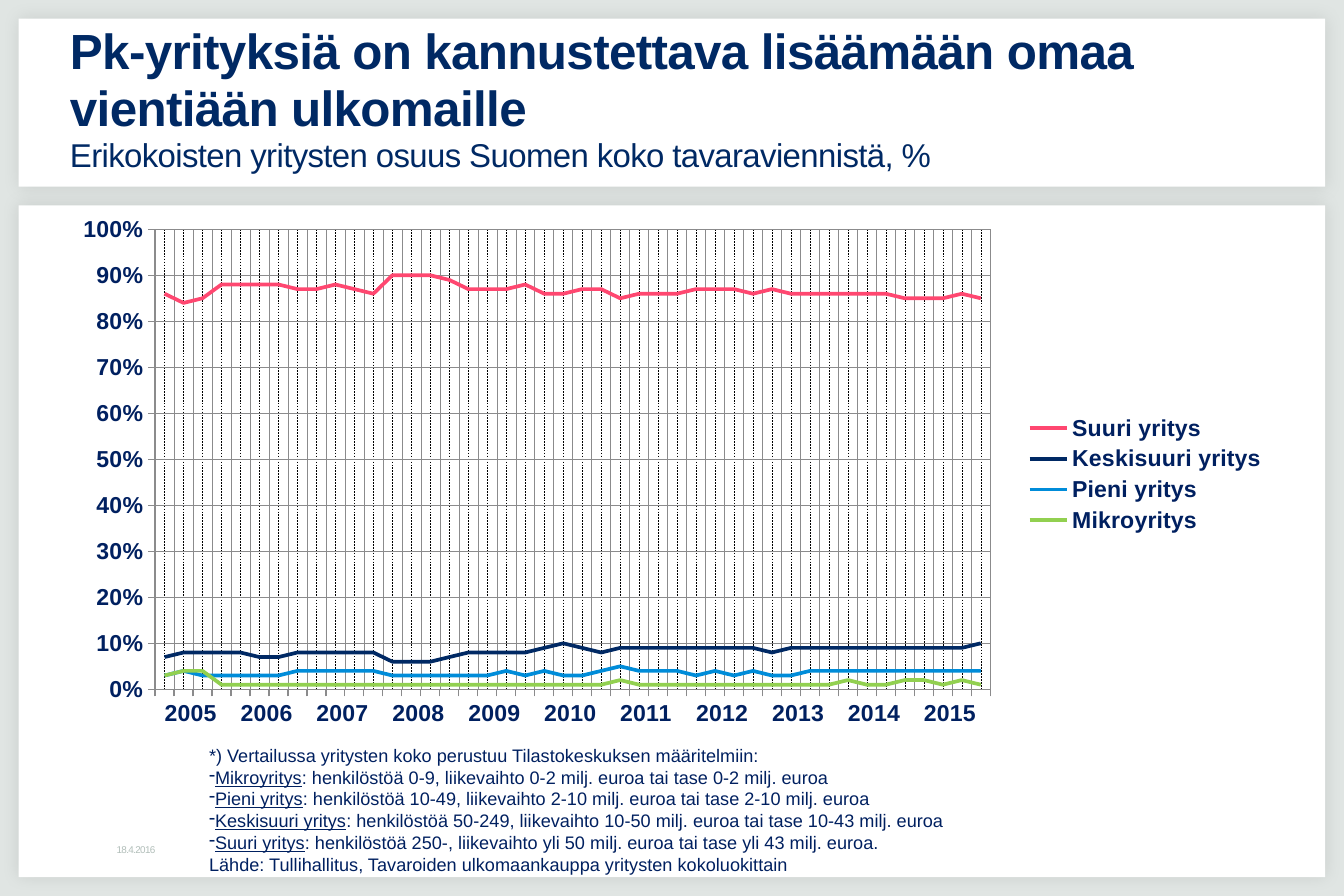
from lxml import etree
from pptx import Presentation
from pptx.chart.data import CategoryChartData
from pptx.dml.color import RGBColor
from pptx.enum.chart import XL_CHART_TYPE, XL_LEGEND_POSITION, XL_MARKER_STYLE, XL_TICK_MARK
from pptx.enum.dml import MSO_LINE
from pptx.enum.shapes import MSO_SHAPE
from pptx.enum.text import MSO_ANCHOR
from pptx.oxml import parse_xml
from pptx.oxml.ns import nsdecls, qn
from pptx.util import Cm, Pt

LINE = XL_CHART_TYPE.LINE
RIGHT = XL_LEGEND_POSITION.RIGHT
BARE = XL_MARKER_STYLE.NONE
OUT = XL_TICK_MARK.OUTSIDE
DOTS = MSO_LINE.ROUND_DOT
RECT = MSO_SHAPE.RECTANGLE
MID, TOP = MSO_ANCHOR.MIDDLE, MSO_ANCHOR.TOP

NAVY, INK, GRID = "002964", "002060", "8B8B8C"
YEARS = range(2005, 2016)
# Name, colour and quarterly shares in percent
SHARES = [
    ("Suuri yritys", "FF4770",
     [86, 84, 85, 88, 88, 88, 88, 87, 87, 88, 87, 86, 90, 90, 90, 89, 87, 87, 87, 88, 86, 86,
      87, 87, 85, 86, 86, 86, 87, 87, 87, 86, 87, 86, 86, 86, 86, 86, 86, 85, 85, 85, 86, 85]),
    ("Keskisuuri yritys", NAVY,
     [7, 8, 8, 8, 8, 7, 7, 8, 8, 8, 8, 8, 6, 6, 6, 7, 8, 8, 8, 8, 9, 10,
      9, 8, 9, 9, 9, 9, 9, 9, 9, 9, 8, 9, 9, 9, 9, 9, 9, 9, 9, 9, 9, 10]),
    ("Pieni yritys", "008CD9",
     [3, 4, 3, 3, 3, 3, 3, 4, 4, 4, 4, 4, 3, 3, 3, 3, 3, 3, 4, 3, 4, 3,
      3, 4, 5, 4, 4, 4, 3, 4, 3, 4, 3, 3, 4, 4, 4, 4, 4, 4, 4, 4, 4, 4]),
    ("Mikroyritys", "92D050",
     [3, 4, 4, 1, 1, 1, 1, 1, 1, 1, 1, 1, 1, 1, 1, 1, 1, 1, 1, 1, 1, 1,
      1, 1, 2, 1, 1, 1, 1, 1, 1, 1, 1, 1, 1, 1, 2, 1, 1, 2, 2, 1, 2, 1]),
]
SIZES = [
    ("Mikroyritys", ": henkilöstöä 0-9, liikevaihto 0-2 milj. euroa tai tase 0-2 milj. euroa"),
    ("Pieni yritys", ": henkilöstöä 10-49, liikevaihto 2-10 milj. euroa tai tase 2-10 milj. euroa"),
    ("Keskisuuri yritys",
     ": henkilöstöä 50-249, liikevaihto 10-50 milj. euroa tai tase 10-43 milj. euroa"),
    ("Suuri yritys",
     ": henkilöstöä 250-, liikevaihto yli 50 milj. euroa tai tase yli 43 milj. euroa."),
]


def paint(target, shade):
    target.rgb = RGBColor.from_string(shade)


def put(target, **values):
    for name, value in values.items():
        setattr(target, name, value)


def style(font, size, shade, **values):
    put(font, name="Arial", size=Pt(size), **values)
    paint(font.color, shade)


def stroke(line, shade, width, dash=None):
    paint(line.color, shade)
    line.width = Pt(width)
    if dash:
        line.dash_style = dash


def write(para, text, size, shade, spc=0, **values):
    run = para.add_run()
    run.text = text
    style(run.font, size, shade, **values)
    if spc:
        run._r.get_or_add_rPr().set("spc", str(spc))


def text_box(slide, box, anchor, pads):
    frame = slide.shapes.add_textbox(*map(Cm, box)).text_frame
    left, top, right, bottom = map(Cm, pads)
    put(frame, word_wrap=True, vertical_anchor=anchor, margin_left=left,
        margin_top=top, margin_right=right, margin_bottom=bottom)
    return frame


def add_panel(slide, box):
    panel = slide.shapes.add_shape(RECT, *map(Cm, box))
    panel.fill.solid()
    paint(panel.fill.fore_color, "FFFFFF")
    panel.line.fill.background()
    panel.shadow.inherit = False
    # Soft glow around the panel
    glow = panel._element.spPr.find(qn("a:effectLst"))
    glow.append(parse_xml(
        f'<a:outerShdw {nsdecls("a")} blurRad="{Pt(10)}" dist="0" algn="ctr" rotWithShape="0">'
        '<a:srgbClr val="000000"><a:alpha val="10000"/></a:srgbClr></a:outerShdw>'))


def add_title(slide, box):
    para = text_box(slide, box, MID, (0.1, 0.13, 0.25, 0.13)).paragraphs[0]
    para.line_spacing = 0.95
    write(para, "Pk-yrityksiä on kannustettava lisäämään omaa vientiään ulkomaille",
          30, NAVY, -40, bold=True)
    para.add_line_break()
    write(para, "Erikokoisten yritysten osuus Suomen koko tavaraviennistä, %", 20, NAVY, -40)


def place_plot(chart, spots):
    area = chart._chartSpace.chart.plotArea
    for old in area.findall(qn("c:layout")):
        area.remove(old)
    layout = etree.Element(qn("c:layout"))
    manual = etree.SubElement(layout, qn("c:manualLayout"))
    parts = [("layoutTarget", "inner"), ("xMode", "edge"), ("yMode", "edge")]
    for name, value in parts + list(zip("xywh", spots)):
        etree.SubElement(manual, qn(f"c:{name}")).set("val", str(value))
    area.insert(0, layout)


def add_lines(slide, box):
    data = CategoryChartData(number_format="0%")
    data.categories = [label for year in YEARS for label in (str(year), "", "", "")]
    for name, _, shares in SHARES:
        data.add_series(name, [share / 100 for share in shares])
    chart = slide.shapes.add_chart(LINE, *map(Cm, box), data).chart
    style(chart.font, 18, "29282E")
    place_plot(chart, (0.088, 0.035, 0.678, 0.874))

    # Series
    plot = chart.plots[0]
    plot.vary_by_categories = False
    for series, (_, shade, _) in zip(plot.series, SHARES):
        series.smooth = False
        series.marker.style = BARE
        stroke(series.format.line, shade, 2.25)

    # Axes and grid
    years, share = chart.category_axis, chart.value_axis
    for axis in (years, share):
        put(axis, major_tick_mark=OUT, has_major_gridlines=True)
        style(axis.tick_labels.font, 14, INK, bold=True)
        stroke(axis.format.line, GRID, 0.75)
    stroke(years.major_gridlines.format.line, GRID, 0.25, DOTS)
    stroke(share.major_gridlines.format.line, GRID, 0.75)
    put(share, minimum_scale=0, maximum_scale=1, major_unit=0.1)
    put(share.tick_labels, number_format="0%", number_format_is_linked=False)
    # Dashed lines through the quarters
    years.has_minor_gridlines = True
    years._element.find(qn("c:minorGridlines")).append(parse_xml(
        f'<c:spPr {nsdecls("c", "a")}><a:ln w="{Pt(0.25)}"><a:solidFill>'
        '<a:srgbClr val="000000"/></a:solidFill><a:prstDash val="dash"/></a:ln></c:spPr>'))
    # A slight turn starts each year at its first quarter
    years._element.find(qn("c:txPr")).find(qn("a:bodyPr")).set("rot", "6000")

    # Legend
    chart.has_legend = True
    put(chart.legend, position=RIGHT, include_in_layout=False)
    style(chart.legend.font, 14, INK, bold=True)


def add_notes(slide, box):
    frame = text_box(slide, box, TOP, (0.28, 0.15, 0.28, 0.15))
    write(frame.paragraphs[0],
          "*) Vertailussa yritysten koko perustuu Tilastokeskuksen määritelmiin:", 11, INK)
    for name, rule in SIZES:
        para = frame.add_paragraph()
        props = para._p.get_or_add_pPr()
        props.set("marL", "0")
        props.set("indent", "0")
        etree.SubElement(props, qn("a:buChar")).set("char", "-")
        write(para, name, 11, INK, underline=True)
        write(para, rule, 11, INK)
    write(frame.add_paragraph(),
          "Lähde: Tullihallitus, Tavaroiden ulkomaankauppa yritysten kokoluokittain", 11, INK)


def add_date(slide, box):
    frame = text_box(slide, box, MID, (0.1, 0.1, 0.1, 0.1))
    write(frame.paragraphs[0], "18.4.2016", 6, "B1BEB9", -40)


def main():
    deck = Presentation()
    put(deck, slide_width=Cm(28.8), slide_height=Cm(19.2))
    slide = deck.slides.add_slide(deck.slide_layouts[6])
    slide.background.fill.solid()
    paint(slide.background.fill.fore_color, "E0E5E3")
    add_panel(slide, (0.4, 0.4, 28, 3.6))
    add_panel(slide, (0.4, 4.4, 28, 14.4))
    add_lines(slide, (1, 4.52, 26.4, 11.28))
    add_date(slide, (2.4, 18, 3.6, 0.4))
    add_title(slide, (1.4, 0.74, 26.2, 2.8))
    add_notes(slide, (4.2, 15.8, 16.46, 3.18))
    deck.save("out.pptx")


if __name__ == "__main__":
    main()
